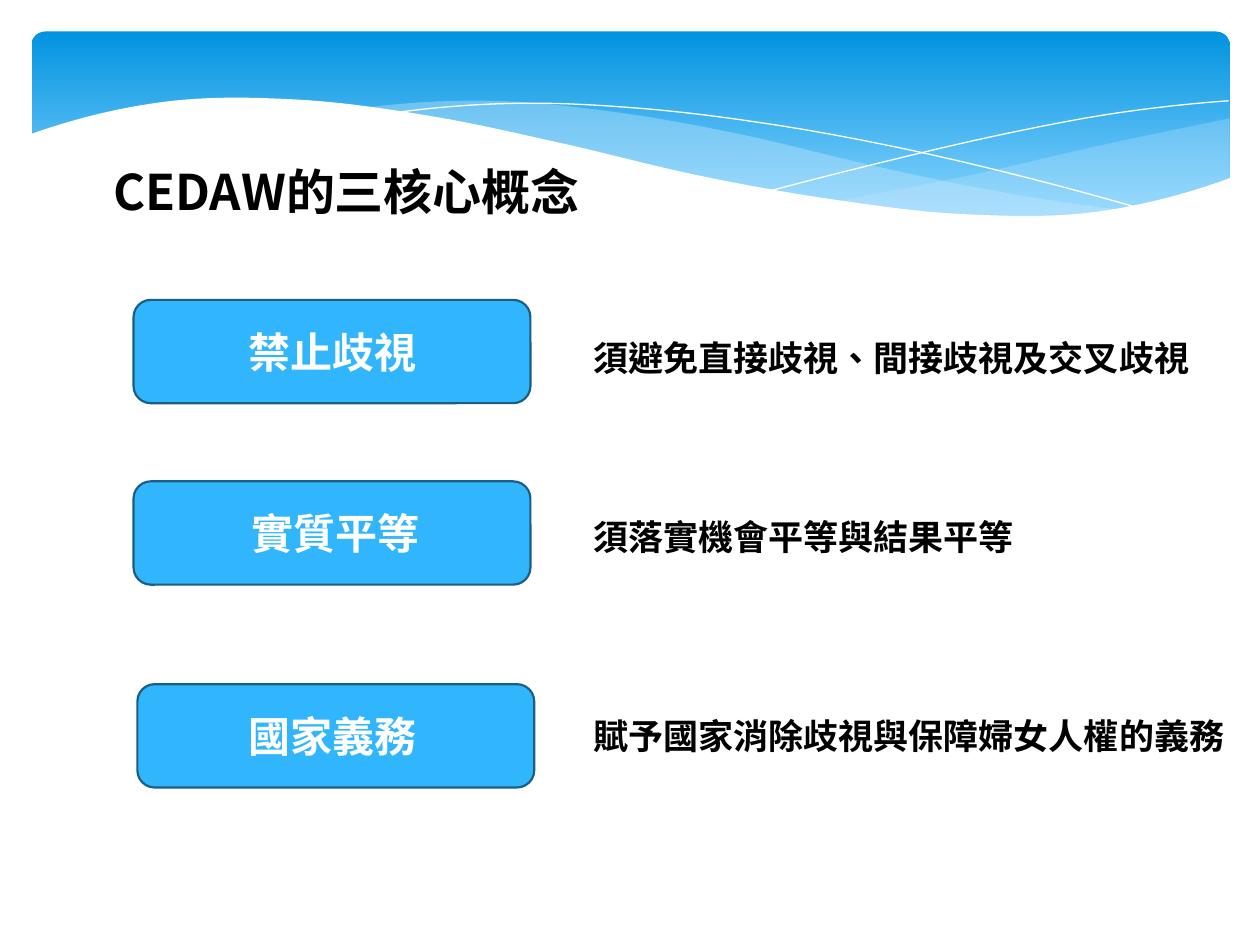
from collections import namedtuple

from pptx import Presentation
from pptx import util as u
from pptx.dml.color import RGBColor
from pptx.enum import shapes, text
from pptx.oxml import parse_xml
from pptx.oxml.ns import nsdecls, qn

FONT = "Noto Sans CJK SC"
BLACK = RGBColor(0x00, 0x00, 0x00)
WHITE = RGBColor(0xFF, 0xFF, 0xFF)
BLUE = RGBColor(0x31, 0xB6, 0xFD)
EDGE = RGBColor(0x19, 0x5F, 0x84)
DEEP = RGBColor(0x02, 0x93, 0xE0)
SKY = RGBColor(0x83, 0xD3, 0xFE)
MIST = RGBColor(0xC6, 0xE7, 0xFC)

Row = namedtuple("Row", "left top name_left gist_top gist_width name gist")
ROWS = [
    Row(1.06, 2.38, 1.34, 2.62, 4.96, "禁止歧視", "須避免直接歧視、間接歧視及交叉歧視"),
    Row(1.06, 3.82, 1.36, 4.04, 4.96, "實質平等", "須落實機會平等與結果平等"),
    Row(1.09, 5.43, 1.34, 5.62, 5.27, "國家義務", "賦予國家消除歧視與保障婦女人權的義務"),
]


def blend(p, q, r, s, t):
    """Return the Catmull-Rom value at t between q and r."""
    return (q + (r - p) * t / 2 + (2 * p - 5 * q + 4 * r - s) * t ** 2 / 2
            + (3 * q - p - 3 * r + s) * t ** 3 / 2)


def curve(start, end, ys, steps=12):
    """Return a smooth curve through heights spaced evenly from start to end."""
    before = 3 * ys[0] - 3 * ys[1] + ys[2]
    after = 3 * ys[-1] - 3 * ys[-2] + ys[-3]
    knots = [before, *ys, after]
    last = (len(ys) - 1) * steps
    pts = []
    for n in range(last):
        i, part = divmod(n, steps)
        pts.append((start + (end - start) * n / last, blend(*knots[i:i + 4], part / steps)))
    return pts + [(end, ys[-1])]


def draw(slide, pts, close):
    """Draw an outline through points given in inches."""
    pts = [(u.Inches(x), u.Inches(y)) for x, y in pts]
    pen = slide.shapes.build_freeform(*pts[0])
    pen.add_line_segments(pts[1:], close=close)
    shape = pen.convert_to_shape()
    shape.shadow.inherit = False
    return shape


def wave(slide, upper, lower, tint, alpha=100):
    """Fill the area between an upper and a lower edge."""
    shape = draw(slide, upper + lower[::-1], True)
    shape.fill.solid()
    shape.fill.fore_color.rgb = tint
    shape.line.fill.background()
    tone = shape.element.spPr.find(qn("a:solidFill"))[0]
    tone.append(parse_xml(f'<a:alpha {nsdecls("a")} val="{alpha * 1000}"/>'))


def thread(slide, pts):
    """Add a white hairline."""
    shape = draw(slide, pts, False)
    shape.fill.background()
    shape.line.color.rgb = WHITE
    shape.line.width = u.Pt(0)


def box(slide, *place):
    """Add a rounded rectangle."""
    shape = slide.shapes.add_shape(shapes.MSO_SHAPE.ROUNDED_RECTANGLE, *map(u.Inches, place))
    shape.shadow.inherit = False
    return shape


def panel(slide):
    """Add the gradient panel of the banner."""
    shape = box(slide, 0.25, 0.25, 9.51, 1.56)
    shape.adjustments[0] = 0.07
    shape.line.fill.background()
    shape.fill.gradient()
    shape.fill.gradient_angle = 270
    for stop, tint, pos in zip(shape.fill.gradient_stops, (DEEP, SKY), (0, 0.9)):
        stop.color.rgb = tint
        stop.position = pos


def banner(slide):
    """Add the panel with its waves and threads."""
    panel(slide)
    wave(slide, curve(6.61, 9.76, [1.6, 1.4, 1.16, 0.94]),
         curve(6.61, 9.76, [1.6, 1.71, 1.69, 1.41]), MIST, 29)
    wave(slide, curve(2.86, 8.93, [0.86, 0.8, 0.89, 1.07, 1.31, 1.52, 1.67]),
         curve(2.86, 8.93, [0.86, 1.02, 1.25, 1.48, 1.64, 1.73, 1.67]), MIST, 40)
    thread(slide, curve(3.09, 9.07, [0.9, 0.82, 0.86, 0.98, 1.16, 1.39, 1.66]))
    thread(slide, curve(6.13, 9.75, [1.51, 1.28, 1.07, 0.9, 0.8]))
    front = [1.07, 0.81, 0.79, 0.92, 1.14, 1.39, 1.58, 1.7, 1.68, 1.41]
    wave(slide, curve(0.23, 9.77, front), [(0.23, 2.24), (9.77, 2.24)], WHITE)


def write(shape, words, size, tint, align=text.PP_ALIGN.LEFT):
    """Write one bold line at the top of a shape."""
    frame = shape.text_frame
    frame.word_wrap = True
    frame.auto_size = text.MSO_AUTO_SIZE.NONE
    frame.vertical_anchor = text.MSO_ANCHOR.TOP
    para = frame.paragraphs[0]
    para.alignment = align
    run = para.add_run()
    run.text = words
    font = run.font
    font.name, font.size, font.bold = FONT, u.Pt(size), True
    font.color.rgb = tint
    props = run._r.get_or_add_rPr()
    props.set("lang", "zh-TW")
    props.find(qn("a:latin")).addnext(
        parse_xml(f'<a:ea {nsdecls("a")} typeface="{FONT}"/>'))


def title(slide, words):
    """Place the title in front of the banner."""
    head = slide.shapes.title
    head.left, head.top, head.width, head.height = map(u.Inches, (0.8, 1.23, 8.43, 1.51))
    write(head, words, 28, BLACK)
    slide.shapes.element.append(head.element)


def note(slide, place, *style):
    """Add a text box with one line."""
    write(slide.shapes.add_textbox(*map(u.Inches, place)), *style)


def card(slide, left, top):
    """Add the blue card behind a concept."""
    shape = box(slide, left, top, 3.15, 0.82)
    shape.fill.solid()
    shape.fill.fore_color.rgb = BLUE
    shape.line.color.rgb = EDGE
    shape.line.width = u.Pt(1.25)


def concept(slide, row):
    """Add a card, its name and its gist."""
    card(slide, row.left, row.top)
    note(slide, (row.name_left, row.top + 0.16, 2.6, 0.5),
         row.name, 24, WHITE, text.PP_ALIGN.CENTER)
    note(slide, (4.61, row.gist_top, row.gist_width, 0.44), row.gist, 20, BLACK)


def main():
    """Build and save the slide."""
    deck = Presentation()
    deck.slide_width, deck.slide_height = u.Inches(10), u.Inches(7.5)
    slide = deck.slides.add_slide(deck.slide_layouts[5])
    banner(slide)
    title(slide, "CEDAW的三核心概念")
    for row in ROWS:
        concept(slide, row)
    deck.save("out.pptx")


if __name__ == "__main__":
    main()
